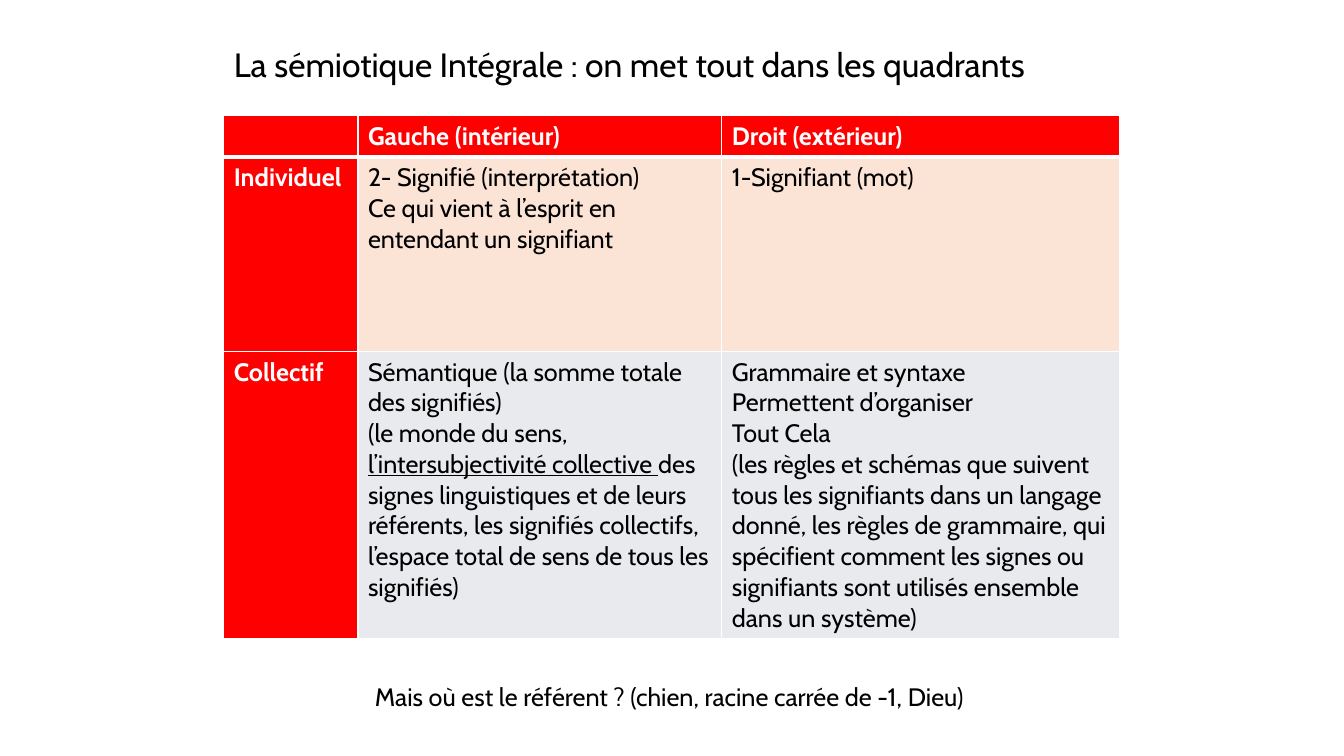
from lxml import etree
from pptx import Presentation
from pptx.dml.color import RGBColor
from pptx.enum.text import MSO_ANCHOR, MSO_AUTO_SIZE, PP_ALIGN
from pptx.oxml.ns import qn
from pptx.util import Cm, Pt

MIDDLE = MSO_ANCHOR.MIDDLE
TOP = MSO_ANCHOR.TOP
LEFT = PP_ALIGN.LEFT
NO_FIT = MSO_AUTO_SIZE.NONE

FONT = "Cabin"
COLORS = {
    "header": "FF0000",
    "individual": "FBE3D6",
    "collective": "E8EAED",
    "light": "FFFFFF",
    "dark": "000000",
}
COLUMN_WIDTHS = [3.38, 9.17, 10.03]
ROW_HEIGHTS = [1.04, 4.9, 7.24]
ROW_FILLS = ["header", "individual", "collective"]
UNDERLINED = "l’intersubjectivité collective "

QUADRANTS = [
    [[], ["Gauche (intérieur)"], ["Droit (extérieur)"]],
    [
        ["Individuel"],
        [
            "2- Signifié (interprétation)",
            "Ce qui vient à l’esprit en entendant un signifiant",
        ],
        ["1-Signifiant (mot)"],
    ],
    [
        ["Collectif"],
        [
            "Sémantique (la somme totale",
            "des signifiés)",
            "(le monde du sens, " + UNDERLINED
            + "des signes linguistiques et de leurs référents, les signifiés "
            "collectifs, l’espace total de sens de tous les signifiés)",
        ],
        [
            "Grammaire et syntaxe",
            "Permettent d’organiser",
            "Tout Cela",
            "(les règles et schémas que suivent tous les signifiants dans un "
            "langage donné, les règles de grammaire, qui spécifient comment "
            "les signes ou signifiants sont utilisés ensemble dans un système)",
        ],
    ],
]


def rgb(name):
    return RGBColor.from_string(COLORS[name])


def format_run(r, size, color, bold=False):
    r.font.name = FONT
    r.font.size = Pt(size)
    r.font.bold = bold
    r.font.color.rgb = rgb(color)


def write_paragraph(p, text, size, color, bold=False):
    before, mark, after = text.partition(UNDERLINED)
    p.text = before
    p.alignment = LEFT
    for part in filter(None, (mark, after)):
        r = p.add_run()
        r.text = part
        r.font.underline = part == UNDERLINED
    for r in p.runs:
        format_run(r, size, color, bold)


def write_line(sp, text, size, anchor):
    tf = sp.text_frame
    tf.word_wrap = False
    tf.auto_size = NO_FIT
    tf.vertical_anchor = anchor
    write_paragraph(tf.paragraphs[0], text, size, "dark")


def set_borders(cell, widths):
    tcPr = cell._tc.get_or_add_tcPr()
    for i, (side, width) in enumerate(widths.items()):
        ln = etree.Element(qn(f"a:ln{side}"), w=str(Pt(width)))
        fill = etree.SubElement(ln, qn("a:solidFill"))
        etree.SubElement(fill, qn("a:srgbClr"), val=COLORS["light"])
        tcPr.insert(i, ln)


def fill_cell(cell, row, col, lines):
    heading = row == 0 or col == 0
    cell.fill.solid()
    cell.fill.fore_color.rgb = rgb("header" if heading else ROW_FILLS[row])
    set_borders(cell, {
        "L": 1,
        "R": 1,
        "T": 3 if row == 1 else 1,
        "B": 3 if row == 0 else 1,
    })
    cell.text_frame.text = "\n".join(lines)
    for p, line in zip(cell.text_frame.paragraphs, lines):
        write_paragraph(p, line, 18, "light" if heading else "dark", heading)


def add_quadrants(s):
    table = s.shapes.add_table(
        len(ROW_HEIGHTS), len(COLUMN_WIDTHS), Cm(5.64), Cm(2.92),
        Cm(sum(COLUMN_WIDTHS)), Cm(sum(ROW_HEIGHTS)),
    ).table
    for column, width in zip(table.columns, COLUMN_WIDTHS):
        column.width = Cm(width)
    for row, height in zip(table.rows, ROW_HEIGHTS):
        row.height = Cm(height)
    for row, cells in enumerate(QUADRANTS):
        for col, lines in enumerate(cells):
            fill_cell(table.cell(row, col), row, col, lines)


def add_title(s, text):
    sp = s.shapes.title
    sp.left, sp.top, sp.width, sp.height = Cm(5.64), Cm(0.97), Cm(21.16), Cm(1.28)
    write_line(sp, text, 24, MIDDLE)


def add_question(s, text):
    sp = s.shapes.add_textbox(Cm(9.2), Cm(17.04), Cm(16.05), Cm(1.03))
    write_line(sp, text, 18, TOP)


def main():
    prs = Presentation()
    prs.slide_width, prs.slide_height = Cm(33.87), Cm(19.05)
    s = prs.slides.add_slide(prs.slide_layouts[5])
    add_title(s, "La sémiotique Intégrale : on met tout dans les quadrants")
    add_quadrants(s)
    add_question(s, "Mais où est le référent ? (chien, racine carrée de -1, Dieu)")
    prs.save("out.pptx")


if __name__ == "__main__":
    main()
